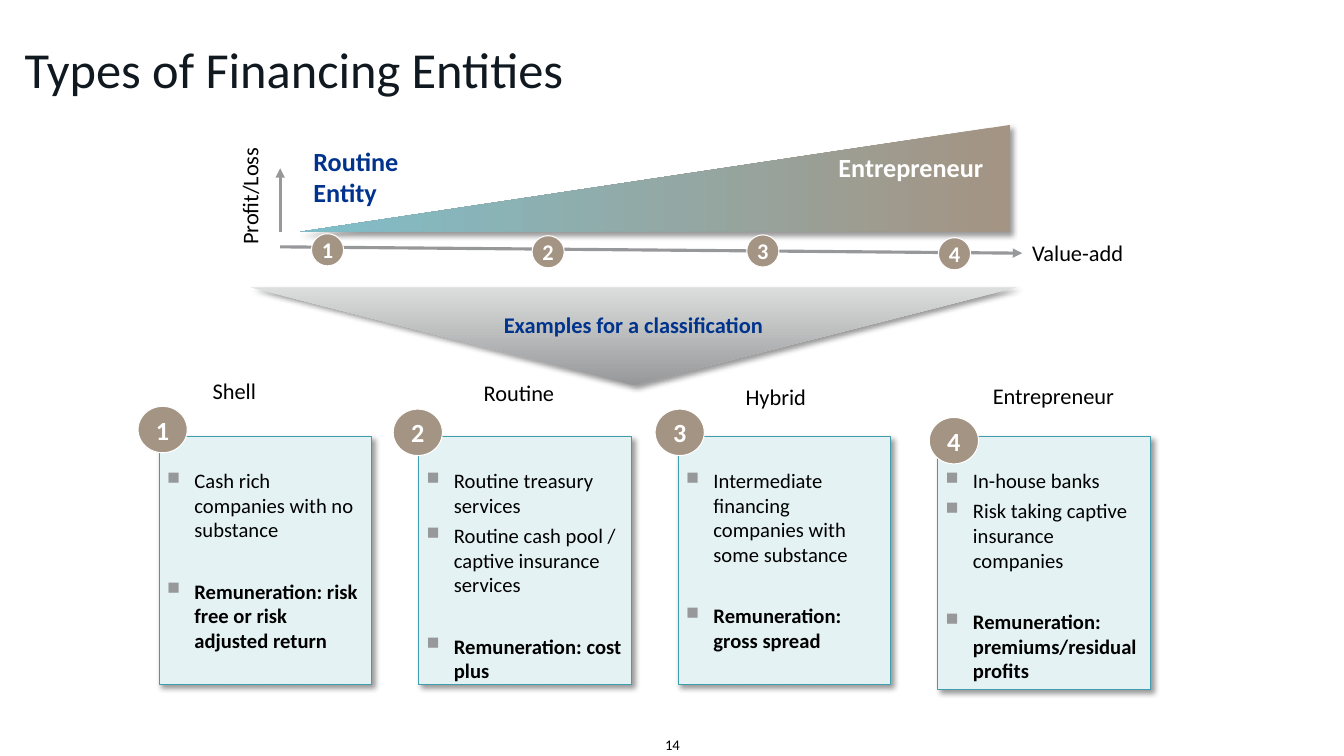
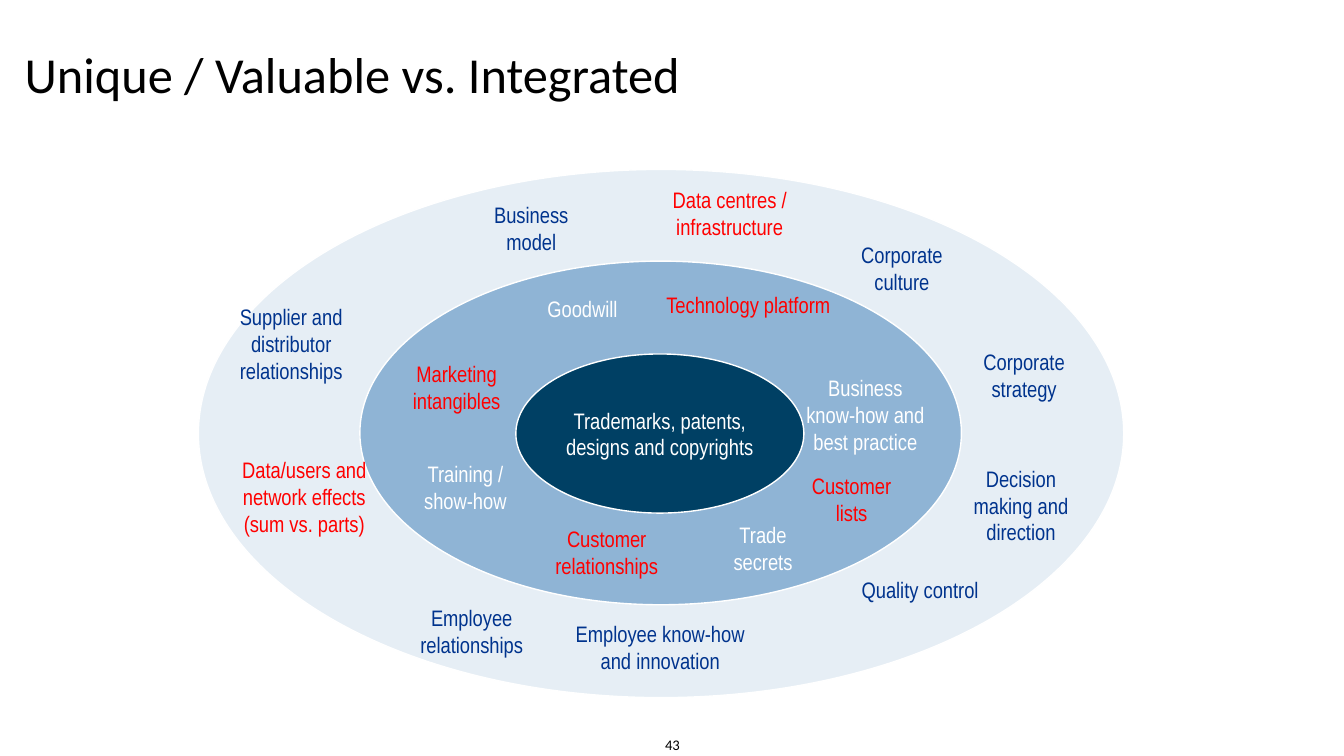
"""Build two slides: types of financing entities and layers of intangibles."""
from lxml.etree import SubElement
from pptx import Presentation
from pptx.dml.color import RGBColor
from pptx.enum.shapes import MSO_CONNECTOR, MSO_SHAPE
from pptx.enum.text import MSO_ANCHOR, PP_ALIGN
from pptx.oxml.ns import qn
from pptx.util import Cm, Pt

COLORS = {
    "title": "101820", "black": "000000", "white": "FFFFFF", "navy": "00338D",
    "red": "FF0000", "taupe": "A49483", "teal": "80BEC9", "gray": "97989A",
    "silver": "DCDDDD", "card": "E5F2F4", "card_line": "409DAD",
    "outer": "E6EEF5", "middle": "8FB4D5", "inner": "004064",
}
BODY_FONT = "Calibri"
DIAGRAM_FONT = "Arial Narrow"

AXES = [((7.06, 5.84), (7.06, 4.24)), ((7.06, 6.22), (25.76, 6.38))]
AXIS_BADGES = [(7.85, 5.89), (13.41, 5.94), (18.82, 5.92), (23.65, 5.99)]
CARD_LEFT, CARD_TOP, CARD_WIDTH, CARD_PITCH = 4.01, 11, 5.36, 6.54
CARDS = [
    {"label": "Shell", "label_at": (5.36, 9.5), "badge_at": (3.48, 10.24), "height": 6.25,
     "points": ["Cash rich companies with no substance"],
     "remuneration": "Remuneration: risk free or risk adjusted return"},
    {"label": "Routine", "label_at": (12.19, 9.55), "badge_at": (9.91, 10.31), "height": 6.25,
     "points": ["Routine treasury services", "Routine cash pool / captive insurance services"],
     "remuneration": "Remuneration: cost plus"},
    {"label": "Hybrid", "label_at": (18.79, 9.66), "badge_at": (16.51, 10.31), "height": 6.25,
     "points": ["Intermediate financing companies with some substance"],
     "remuneration": "Remuneration: gross spread"},
    {"label": "Entrepreneur", "label_at": (25.02, 9.63), "badge_at": (23.42, 10.52), "height": 6.38,
     "points": ["In-house banks", "Risk taking captive insurance companies"],
     "remuneration": "Remuneration: premiums/residual profits"},
]

RINGS = [
    ("outer", (5, 4.27, 23.32, 13.31), ""),
    ("middle", (9.07, 6.58, 15.16, 8.66), ""),
    ("inner", (13, 8.92, 7.26, 4.01), "Trademarks, patents, designs and copyrights"),
]
LABEL_WIDTH, LABEL_HEIGHT = 3.96, 1.12
RING_LABELS = {
    "navy": [
        ("Business\nmodel", 13.39, 5.74, LABEL_WIDTH),
        ("Corporate culture", 22.73, 6.76, 3.15),
        ("Corporate\nstrategy", 25.81, 9.45, LABEL_WIDTH),
        ("Decision\nmaking and direction", 25.73, 12.73, LABEL_WIDTH),
        ("Quality control", 23.19, 14.86, LABEL_WIDTH),
        ("Employee know-how\nand innovation", 16.64, 16.31, 6.15),
        ("Employee relationships", 11.89, 15.9, LABEL_WIDTH),
        ("Supplier and\ndistributor\nrelationships", 7.34, 8.66, LABEL_WIDTH),
    ],
    "white": [
        ("Goodwill", 14.68, 7.77, LABEL_WIDTH),
        ("Business\nknow-how and\nbest practice", 21.81, 10.44, 4.45),
        ("Trade\nsecrets", 19.23, 13.82, LABEL_WIDTH),
        ("Training /\nshow-how", 11.73, 12.27, LABEL_WIDTH),
    ],
    "red": [
        ("Data centres / infrastructure", 18.39, 5.36, 5.13),
        ("Technology platform", 18.86, 7.67, 5.16),
        ("Marketing intangibles", 11.51, 9.75, LABEL_WIDTH),
        ("Customer\nlists", 21.46, 12.57, LABEL_WIDTH),
        ("Customer\nrelationships", 15.29, 13.92, LABEL_WIDTH),
        ("Data/users and network effects\n(sum vs. parts)", 7.67, 12.51, LABEL_WIDTH),
    ],
}


def rgb(name):
    return RGBColor.from_string(COLORS[name])


def set_frame(shape, anchor=MSO_ANCHOR.TOP, insets=(0, 0, 0, 0), wrap=True):
    frame = shape.text_frame
    frame.word_wrap = wrap
    frame.vertical_anchor = anchor
    frame.margin_left, frame.margin_top, frame.margin_right, frame.margin_bottom = map(Cm, insets)
    return frame


def write(paragraph, text, size, color, bold=False, font=BODY_FONT, align=PP_ALIGN.LEFT):
    paragraph.alignment = align
    for index, line in enumerate(text.split("\n")):
        if index:
            paragraph.add_line_break()
        run = paragraph.add_run()
        run.text = line
        run.font.name = font
        run.font.size = Pt(size)
        run.font.bold = bold
        run.font.color.rgb = rgb(color)


def add_text(slide, box, text, size, color, anchor=MSO_ANCHOR.TOP, **style):
    shape = slide.shapes.add_textbox(*map(Cm, box))
    write(set_frame(shape, anchor).paragraphs[0], text, size, color, **style)
    return shape


def add_shape(slide, kind, box, fill=None, line=None, line_width=0.75):
    shape = slide.shapes.add_shape(kind, *map(Cm, box))
    shape.shadow.inherit = False
    if fill:
        shape.fill.solid()
        shape.fill.fore_color.rgb = rgb(fill)
    if line:
        shape.line.color.rgb = rgb(line)
        shape.line.width = Pt(line_width)
    else:
        shape.line.fill.background()
    return shape


def set_gradient(shape, start, end, angle):
    shape.fill.gradient()
    shape.fill.gradient_angle = angle
    for stop, color in zip(shape.fill.gradient_stops, (start, end)):
        stop.color.rgb = rgb(color)


def add_shadow(shape):
    effects = shape.element.spPr.find(qn("a:effectLst"))
    shadow = SubElement(effects, qn("a:outerShdw"), blurRad=str(Pt(4)), dist=str(Pt(3)),
                        dir="2700000", algn="tl", rotWithShape="0")
    color = SubElement(shadow, qn("a:srgbClr"), val=COLORS["black"])
    SubElement(color, qn("a:alpha"), val="40000")


def add_arrow(slide, start, end):
    arrow = slide.shapes.add_connector(MSO_CONNECTOR.STRAIGHT, *map(Cm, start + end))
    arrow.line.color.rgb = rgb("gray")
    arrow.line.width = Pt(2.25)
    SubElement(arrow.line._get_or_add_ln(), qn("a:tailEnd"), type="triangle")
    SubElement(arrow._element.spPr, qn("a:effectLst"))


def add_badge(slide, number, position, size, text_size):
    badge = add_shape(slide, MSO_SHAPE.OVAL, position + size, "taupe", "white")
    frame = set_frame(badge, MSO_ANCHOR.MIDDLE, wrap=False)
    write(frame.paragraphs[0], str(number), text_size, "white", bold=True, align=PP_ALIGN.CENTER)


def add_bullet(paragraph, text, space_before, bold=False):
    write(paragraph, text, 14.7, "black", bold)
    paragraph.space_before = Pt(space_before)
    properties = paragraph._p.get_or_add_pPr()
    properties.set("marL", str(Cm(0.69)))
    properties.set("indent", str(-Cm(0.69)))
    color = SubElement(properties, qn("a:buClr"))
    SubElement(color, qn("a:srgbClr"), val=COLORS["gray"])
    SubElement(properties, qn("a:buSzPct"), val="85000")
    SubElement(properties, qn("a:buChar"), char="■")


def add_card(slide, index, card):
    box = (CARD_LEFT + index * CARD_PITCH, CARD_TOP, CARD_WIDTH, card["height"])
    shape = add_shape(slide, MSO_SHAPE.RECTANGLE, box, "card", "card_line")
    add_shadow(shape)
    frame = set_frame(shape, insets=(0.2, 0.79, 0.2, 0.2))
    for position, point in enumerate(card["points"]):
        paragraph = frame.add_paragraph() if position else frame.paragraphs[0]
        add_bullet(paragraph, point, 4)
    add_bullet(frame.add_paragraph(), card["remuneration"], 26, bold=True)
    add_badge(slide, index + 1, card["badge_at"], (1.24, 1.17), 18.7)
    add_text(slide, card["label_at"] + (3.8, 0.69), card["label"], 16, "black")


def start_slide(presentation, title, title_top, title_color, number):
    slide = presentation.slides.add_slide(presentation.slide_layouts[6])
    add_text(slide, (0.62, title_top, 30.5, 1.6), title, 36, title_color)
    add_text(slide, (16.76, 18.54, 1, 0.5), number, 10.5, "black")
    return slide


def build_entities(presentation):
    slide = start_slide(presentation, "Types of Financing Entities", 0.97, "title", "14")
    wedge = add_shape(slide, MSO_SHAPE.ISOSCELES_TRIANGLE, (7.57, 3.15, 17.88, 2.69))
    wedge.adjustments[0] = 1
    set_gradient(wedge, "taupe", "teal", 180)
    add_shadow(wedge)
    add_text(slide, (21.13, 3.81, 4.14, 0.79), "Entrepreneur", 18.7, "white", bold=True)
    add_text(slide, (7.9, 3.66, 2.72, 1.6), "Routine Entity", 18.7, "navy", bold=True)
    add_text(slide, (26.01, 6.02, 3.61, 0.69), "Value-add", 16, "black")
    for start, end in AXES:
        add_arrow(slide, start, end)
    profit = add_text(slide, (4.95, 4.6, 2.69, 0.69), "Profit/Loss", 16, "black",
                      align=PP_ALIGN.CENTER)
    profit.rotation = 270
    funnel = add_shape(slide, MSO_SHAPE.FLOWCHART_MERGE, (6.3, 7.24, 19.33, 2.46))
    set_gradient(funnel, "silver", "gray", 270)
    add_shadow(funnel)
    frame = set_frame(funnel, MSO_ANCHOR.MIDDLE, (0, 0.66, 0, 0))
    write(frame.paragraphs[0], "Examples for a classification", 16, "navy", bold=True,
          align=PP_ALIGN.CENTER)
    for number, position in enumerate(AXIS_BADGES, 1):
        add_badge(slide, number, position, (0.81, 0.81), 16)
    for index, card in enumerate(CARDS):
        add_card(slide, index, card)


def build_intangibles(presentation):
    slide = start_slide(presentation, "Unique / Valuable vs. Integrated", 1.09, "black", "43")
    style = {"font": DIAGRAM_FONT, "align": PP_ALIGN.CENTER}
    for fill, box, text in RINGS:
        ring = add_shape(slide, MSO_SHAPE.OVAL, box, fill, "white", 1)
        if text:
            frame = set_frame(ring, MSO_ANCHOR.MIDDLE)
            write(frame.paragraphs[0], text, 16, "white", **style)
    for color, labels in RING_LABELS.items():
        for text, center_x, center_y, width in labels:
            box = (center_x - width / 2, center_y - LABEL_HEIGHT / 2, width, LABEL_HEIGHT)
            add_text(slide, box, text, 16, color, MSO_ANCHOR.MIDDLE, **style)


def main():
    presentation = Presentation()
    presentation.slide_width = Cm(33.87)
    presentation.slide_height = Cm(19.05)
    build_entities(presentation)
    build_intangibles(presentation)
    presentation.save("out.pptx")


if __name__ == "__main__":
    main()
